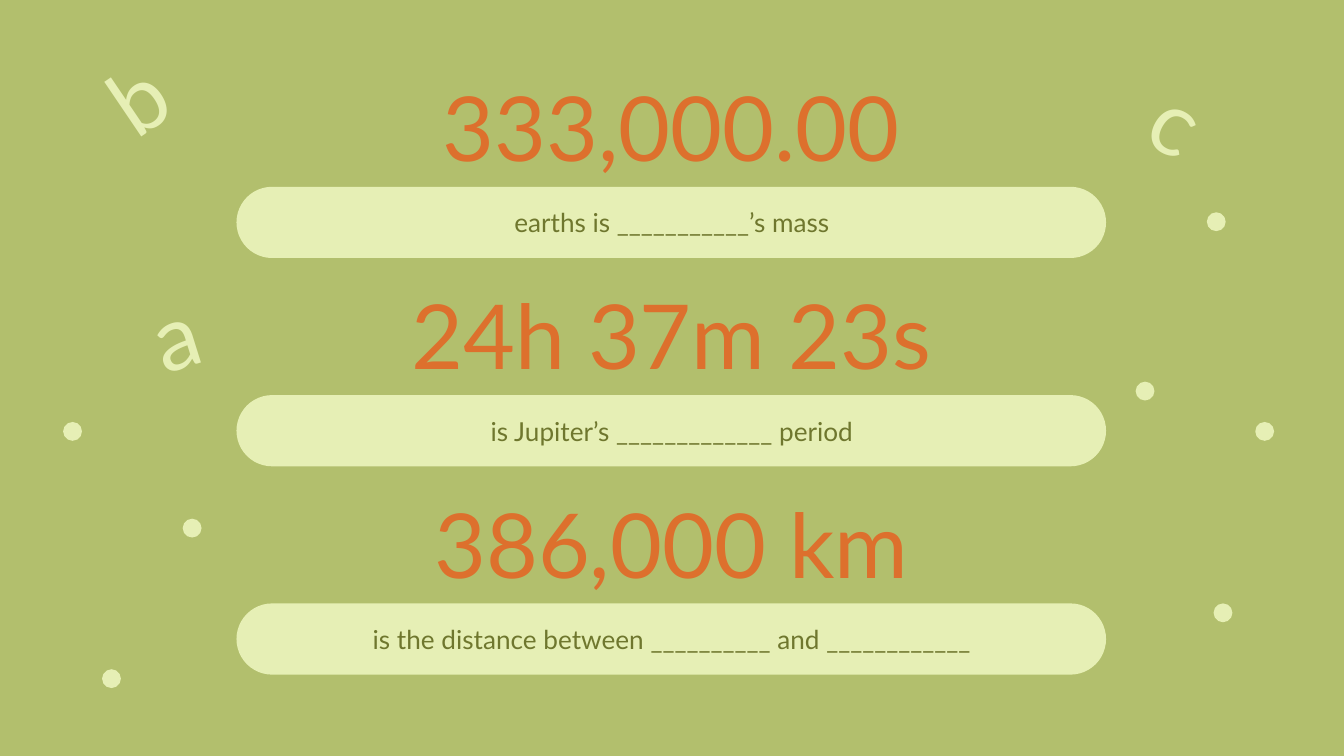
import pptx
import pptx.util
import pptx.dml.color
import pptx.enum.shapes
import pptx.enum.text

Inches = pptx.util.Inches
RGBColor = pptx.dml.color.RGBColor
MSO_SHAPE = pptx.enum.shapes.MSO_SHAPE
PP_ALIGN = pptx.enum.text.PP_ALIGN

OLIVE = RGBColor(0xB2, 0xBF, 0x6D)
CREAM = RGBColor(0xE6, 0xEF, 0xB5)
ORANGE = RGBColor(0xDD, 0x70, 0x2D)
DARK_OLIVE = RGBColor(0x6F, 0x77, 0x2E)


def add_text(text, left, top, width, height, *, size, color,
             align=PP_ALIGN.CENTER, rotation=0):
    box = slide.shapes.add_textbox(
        Inches(left), Inches(top), Inches(width), Inches(height))
    box.rotation = rotation
    frame = box.text_frame
    frame.word_wrap = True
    frame.vertical_anchor = pptx.enum.text.MSO_ANCHOR.MIDDLE
    frame.margin_left = frame.margin_right = Inches(0.1)
    frame.margin_top = frame.margin_bottom = Inches(0.1)
    paragraph = frame.paragraphs[0]
    paragraph.alignment = align
    run = paragraph.add_run()
    run.text = text
    run.font.name = "Lato"
    run.font.size = pptx.util.Pt(size)
    run.font.color.rgb = color


def add_cream_shape(kind, left, top, width, height):
    shape = slide.shapes.add_shape(
        kind, Inches(left), Inches(top), Inches(width), Inches(height))
    shape.shadow.inherit = False
    shape.fill.solid()
    shape.fill.fore_color.rgb = CREAM
    shape.line.fill.background()
    return shape


presentation = pptx.Presentation()
presentation.slide_width = Inches(10)
presentation.slide_height = Inches(5.625)
slide = presentation.slides.add_slide(presentation.slide_layouts[6])
slide.background.fill.solid()
slide.background.fill.fore_color.rgb = OLIVE

# Each fact is a large number above a rounded bar with its caption.
facts = [
    ("333,000.00", "earths is ___________’s mass"),
    ("24h 37m 23s", "is Jupiter’s _____________ period"),
    ("386,000 km", "is the distance between __________ and ____________"),
]
for row, (number, caption) in enumerate(facts):
    number_top = 0.6 + 1.55 * row
    bar_top = number_top + 0.79
    bar = add_cream_shape(MSO_SHAPE.ROUNDED_RECTANGLE, 1.76, bar_top, 6.47, 0.53)
    bar.adjustments[0] = 0.5
    add_text(number, 1.76, number_top, 6.47, 0.67, size=48, color=ORANGE)
    add_text(caption, 1.94, bar_top, 6.12, 0.53, size=14, color=DARK_OLIVE)

letters = [("a", 1.04, 2.19, 342.6), ("b", 0.74, 0.45, 325.9), ("c", 8.51, 0.59, 29.9)]
for letter, left, top, rotation in letters:
    add_text(letter, left, top, 0.49, 0.59, size=48, color=CREAM,
             align=PP_ALIGN.LEFT, rotation=rotation)

dots = [(8.98, 1.58), (8.45, 2.84), (0.76, 4.98), (1.36, 3.86),
        (9.03, 4.49), (9.34, 3.14), (0.47, 3.14)]
for left, top in dots:
    add_cream_shape(MSO_SHAPE.OVAL, left, top, 0.14, 0.14)

presentation.save("out.pptx")
